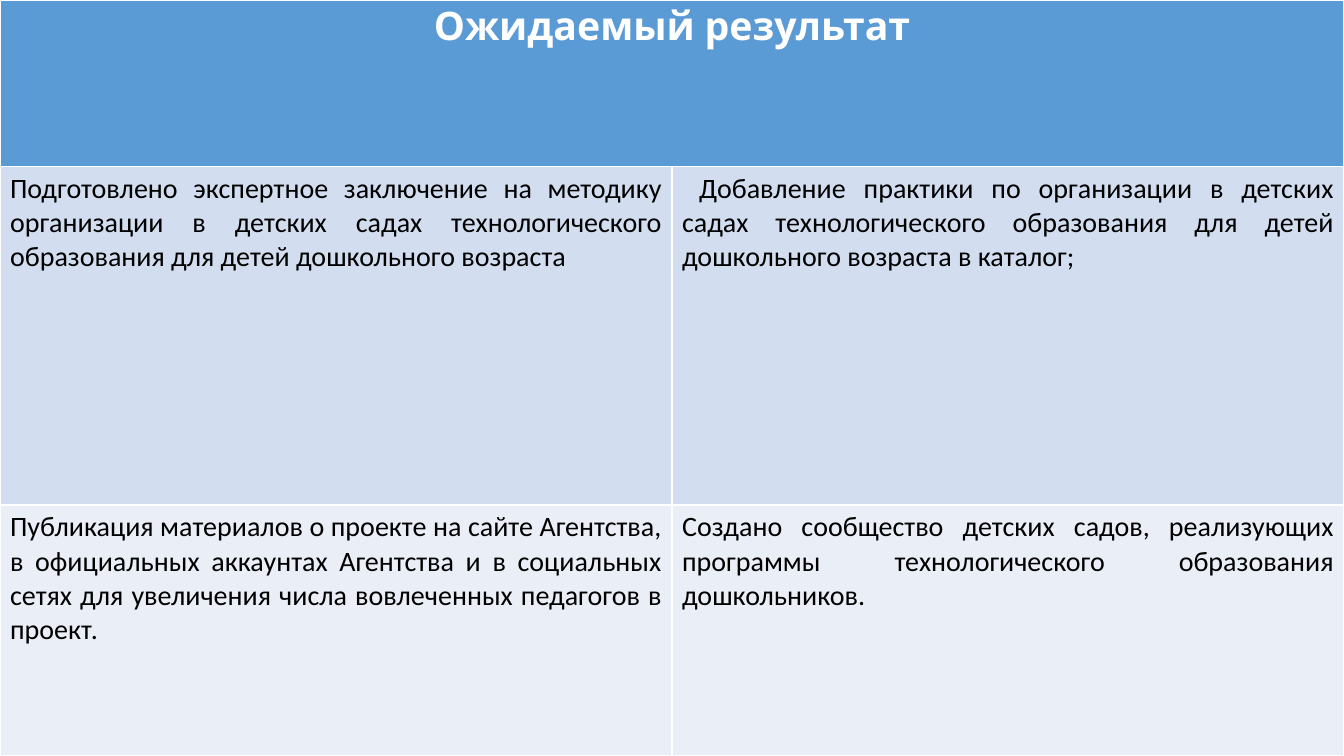
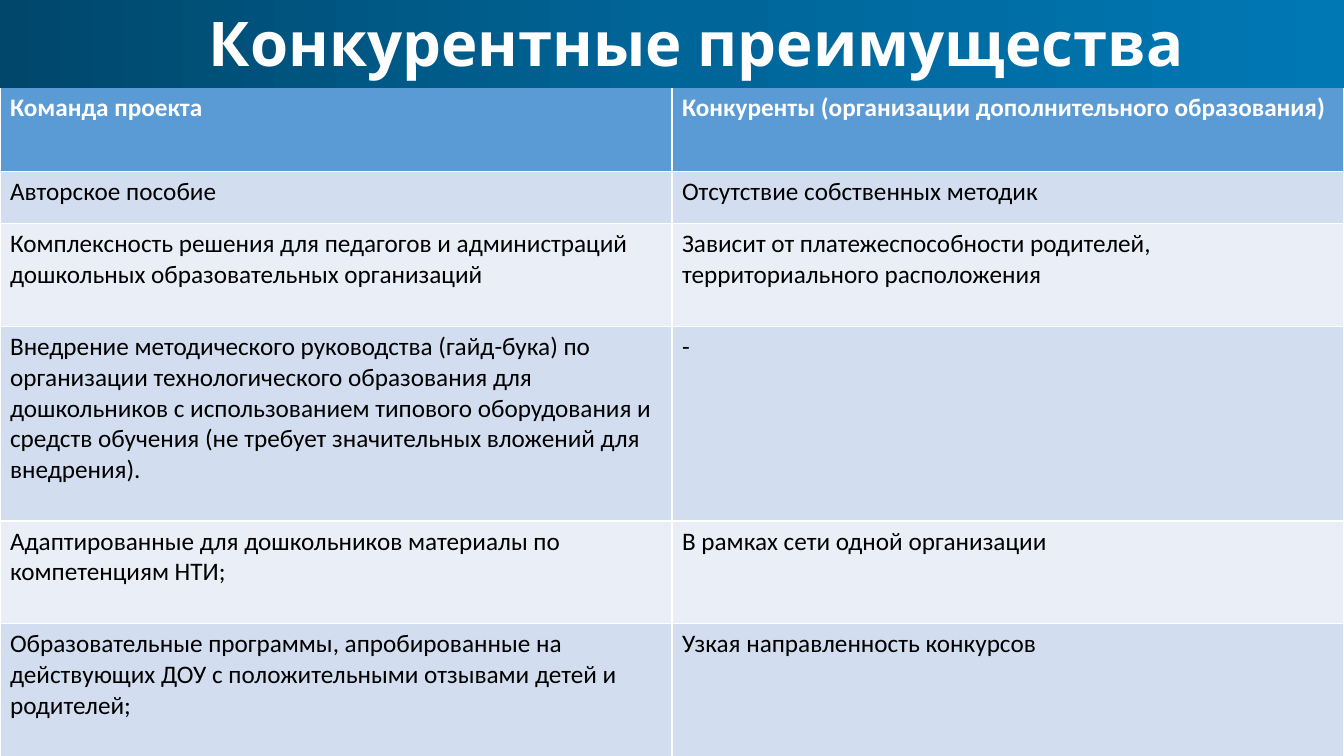
from copy import deepcopy

from pptx import Presentation
from pptx.dml.color import RGBColor
from pptx.enum.shapes import MSO_SHAPE
from pptx.enum.text import MSO_ANCHOR, PP_ALIGN
from pptx.util import Inches, Pt

CENTER, JUSTIFY, LEFT = PP_ALIGN.CENTER, PP_ALIGN.JUSTIFY, PP_ALIGN.LEFT
RECTANGLE, MIDDLE = MSO_SHAPE.RECTANGLE, MSO_ANCHOR.MIDDLE

WIDTH, HEIGHT = 13.33, 7.5
BANNER_TOP, BANNER_HEIGHT = -0.03, 0.9

COLORS = {
    "header": "5B9BD5",
    "odd": "D2DEEF",
    "even": "EAEFF7",
    "white": "FFFFFF",
    "black": "000000",
}
BANNER_STOPS = [(0, "00476B"), (0.5, "006598"), (1, "0078B4")]

STYLES = {
    "title": {"name": "Karla", "size": Pt(28), "bold": True},
    "banner": {"name": "Karla", "size": Pt(44), "bold": True},
    "result": {"name": "Calibri", "size": Pt(20), "bold": False},
    "heading": {"name": "Calibri", "size": Pt(18), "bold": True},
    "feature": {"name": "Calibri", "size": Pt(18), "bold": False},
}

RESULTS = {
    "top": 0,
    "heights": [1.65, 3.36, 2.49],
    "header": ("title", CENTER),
    "body": ("result", JUSTIFY),
    "rows": [
        ("Ожидаемый результат",),
        (
            "Подготовлено экспертное заключение на методику организации в детских садах "
            "технологического образования для детей дошкольного возраста",
            "Добавление практики по организации в детских садах технологического "
            "образования для детей дошкольного возраста в каталог;",
        ),
        (
            "Публикация материалов о проекте на сайте Агентства, в официальных аккаунтах "
            "Агентства и в социальных сетях для увеличения числа вовлеченных педагогов в проект.",
            "Создано сообщество детских садов, реализующих программы технологического "
            "образования дошкольников.",
        ),
    ],
    "indents": {(1, 1): 0.17},
}

ADVANTAGES = {
    "top": BANNER_TOP + BANNER_HEIGHT,
    "heights": [0.83, 0.52, 1.02, 1.93, 1.02, 1.32],
    "header": ("heading", LEFT),
    "body": ("feature", LEFT),
    "rows": [
        ("Команда проекта", "Конкуренты (организации дополнительного образования)"),
        ("Авторское пособие", "Отсутствие собственных методик"),
        (
            "Комплексность решения для педагогов и администраций дошкольных "
            "образовательных организаций",
            "Зависит от платежеспособности родителей, территориального расположения",
        ),
        (
            "Внедрение методического руководства (гайд-бука) по организации "
            "технологического образования для дошкольников с использованием типового "
            "оборудования и средств обучения (не требует значительных вложений для внедрения).",
            "-",
        ),
        (
            "Адаптированные для дошкольников материалы по компетенциям НТИ;",
            "В рамках сети одной организации",
        ),
        (
            "Образовательные программы, апробированные на действующих ДОУ с "
            "положительными отзывами детей и родителей;",
            "Узкая направленность конкурсов",
        ),
    ],
    "indents": {},
}
BANNER_TEXT = "Конкурентные преимущества"


def rgb(name):
    return RGBColor.from_string(COLORS[name])


def write(frame, text, style, align, color, indent=0):
    para = frame.paragraphs[0]
    para.alignment = align
    if indent:
        properties = para._p.get_or_add_pPr()
        properties.set("marL", "0")
        properties.set("indent", str(Inches(indent)))
    span = para.add_run()
    span.text = text
    for key, value in STYLES[style].items():
        setattr(span.font, key, value)
    span.font.color.rgb = rgb(color)


def add_grid(page, content):
    heights, rows = content["heights"], content["rows"]
    columns = 2
    table = page.shapes.add_table(
        len(rows), columns, 0, Inches(content["top"]), Inches(WIDTH), Inches(sum(heights))
    ).table
    for row, height in zip(table.rows, heights):
        row.height = Inches(height)
    for r, texts in enumerate(rows):
        style, align = content["body"] if r else content["header"]
        fill = ("even", "odd")[r % 2] if r else "header"
        for c in range(columns):
            cell = table.cell(r, c)
            cell.fill.solid()
            cell.fill.fore_color.rgb = rgb(fill)
        if len(texts) < columns:
            table.cell(r, 0).merge(table.cell(r, columns - 1))
        for c, text in enumerate(texts):
            write(table.cell(r, c).text_frame, text, style, align,
                  "black" if r else "white", content["indents"].get((r, c), 0))


def add_banner(page, text):
    box = page.shapes.add_shape(
        RECTANGLE, 0, Inches(BANNER_TOP), Inches(WIDTH), Inches(BANNER_HEIGHT)
    )
    box.shadow.inherit = False
    box.line.fill.background()
    box.fill.gradient()
    box.fill.gradient_angle = 0
    stop_list = box.element.xpath(".//a:gsLst")[0]
    stop_list.append(deepcopy(stop_list[0]))
    for stop, (position, color) in zip(box.fill.gradient_stops, BANNER_STOPS):
        stop.position = position
        stop.color.rgb = RGBColor.from_string(color)
    frame = box.text_frame
    frame.word_wrap = True
    frame.vertical_anchor = MIDDLE
    write(frame, text, "banner", CENTER, "white", 0.49)


def main():
    deck = Presentation()
    deck.slide_width, deck.slide_height = Inches(WIDTH), Inches(HEIGHT)
    pages = []
    for content in (RESULTS, ADVANTAGES):
        page = deck.slides.add_slide(deck.slide_layouts[6])
        add_grid(page, content)
        pages.append(page)
    add_banner(pages[1], BANNER_TEXT)
    deck.save("out.pptx")


if __name__ == "__main__":
    main()
